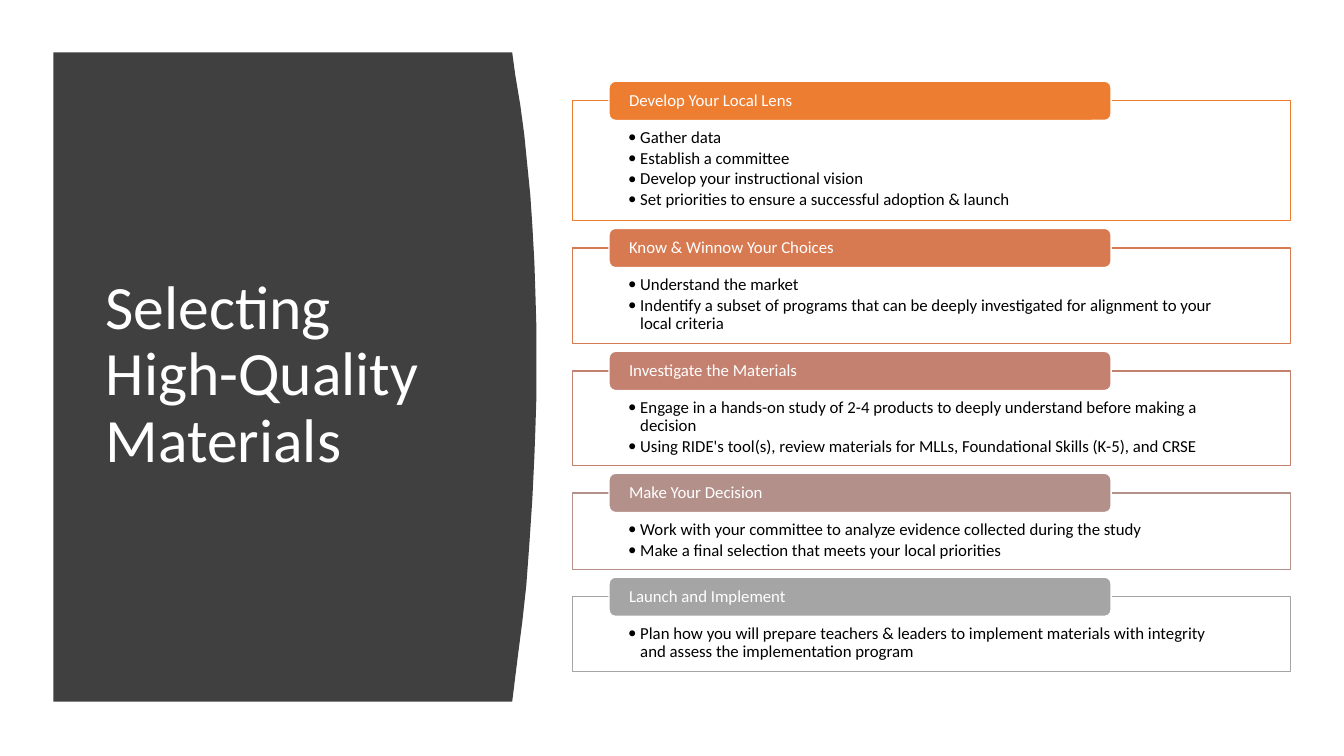
import pptx
import pptx.util
import pptx.dml.color
import pptx.enum.shapes
import pptx.enum.text
import pptx.oxml
import pptx.oxml.ns
from pptx.util import Inches

Shape = pptx.enum.shapes.MSO_SHAPE
Anchor = pptx.enum.text.MSO_ANCHOR
Align = pptx.enum.text.PP_ALIGN
qn = pptx.oxml.ns.qn


def color(code):
    return pptx.dml.color.RGBColor.from_string(code)


def style(para, size, code):
    para.alignment = Align.LEFT
    para.line_spacing = 0.9
    para.font.size = pptx.util.Pt(size)
    para.font.name = "Calibri"
    para.font.color.rgb = color(code)


deck = pptx.Presentation()
deck.slide_width = Inches(13.33)
deck.slide_height = Inches(7.5)
slide = deck.slides.add_slide(deck.slide_layouts[6])
shapes = slide.shapes

# Dark panel with a curved right edge
edge = [(5.08, 0.52), (5.11, 0.74), (5.16, 1.04), (5.2, 1.34), (5.23, 1.64),
        (5.26, 1.94), (5.28, 2.24), (5.3, 2.6), (5.31, 2.9), (5.32, 3.25),
        (5.32, 3.94), (5.31, 4.26), (5.3, 4.53), (5.28, 4.95), (5.25, 5.4),
        (5.22, 5.81), (5.18, 6.17), (5.14, 6.48), (5.11, 6.72), (5.08, 6.96)]
pen = shapes.build_freeform(Inches(0.53), Inches(0.52))
pen.add_line_segments([(Inches(x), Inches(y)) for x, y in edge + [(0.53, 6.96)]])
panel = pen.convert_to_shape()
panel.shadow.inherit = False
panel.fill.solid()
panel.fill.fore_color.rgb = color("404040")
panel.line.fill.background()

# Title
title = shapes.add_textbox(Inches(0.95), Inches(1.11), Inches(3.74), Inches(5.24))
frame = title.text_frame
frame.word_wrap = True
frame.vertical_anchor = Anchor.MIDDLE
frame.text = "Selecting High-Quality Materials"
style(frame.paragraphs[0], 44, "FFFFFF")

# Steps: heading, colour, box height, bullets
steps = [
    ("Develop Your Local Lens", "ED7D31", 1.19,
     ["Gather data", "Establish a committee", "Develop your instructional vision",
      "Set priorities to ensure a successful adoption & launch"]),
    ("Know & Winnow Your Choices", "D87A51", 0.95,
     ["Understand the market",
      "Indentify a subset of programs that can be deeply investigated "
      "for alignment to your local criteria"]),
    ("Investigate the Materials", "C48170", 0.94,
     ["Engage in a hands-on study of 2-4 products to deeply understand "
      "before making a decision",
      "Using RIDE's tool(s), review materials for MLLs, "
      "Foundational Skills (K-5), and CRSE"]),
    ("Make Your Decision", "B4908B", 0.76,
     ["Work with your committee to analyze evidence collected during the study",
      "Make a final selection that meets your local priorities"]),
    ("Launch and Implement", "A5A5A5", 0.74,
     ["Plan how you will prepare teachers & leaders to implement materials "
      "with integrity and assess the implementation program"]),
]
gap = 0.27
top = 1.0
thick = 0.39

for head, tint, high, items in steps:
    box = shapes.add_shape(Shape.RECTANGLE, Inches(5.68), Inches(top),
                           Inches(7.12), Inches(high))
    tab = shapes.add_shape(Shape.ROUNDED_RECTANGLE, Inches(6.04),
                           Inches(top - thick / 2), Inches(4.98), Inches(thick))
    for part, fill, line, side, above, below, anchor in (
            (box, "FFFFFF", tint, 0.55, 0.28, 0.05, Anchor.TOP),
            (tab, tint, "FFFFFF", 0.18, 0, 0, Anchor.MIDDLE)):
        part.shadow.inherit = False
        part.fill.solid()
        part.fill.fore_color.rgb = color(fill)
        part.line.color.rgb = color(line)
        part.line.width = pptx.util.Pt(1)
        frame = part.text_frame
        frame.word_wrap = True
        frame.vertical_anchor = anchor
        frame.margin_left = frame.margin_right = Inches(side)
        frame.margin_top = Inches(above)
        frame.margin_bottom = Inches(below)

    # Box fill is 90% opaque
    tone = box.fill._xPr.find(".//" + qn("a:srgbClr"))
    tone.append(tone.makeelement(qn("a:alpha"), {"val": "90000"}))

    # Heading and bullets
    tab.text_frame.text = head
    style(tab.text_frame.paragraphs[0], 12, "FFFFFF")
    box.text_frame.text = "\n".join(items)
    for para in box.text_frame.paragraphs:
        props = para._p.get_or_add_pPr()
        props.set("marL", str(Inches(0.12)))
        props.set("indent", str(Inches(-0.12)))
        for tag, key, val in (("a:buFont", "typeface", "Calibri"),
                              ("a:buChar", "char", "•")):
            props.append(props.makeelement(qn(tag), {key: val}))
        style(para, 12, "000000")
        para.space_after = pptx.util.Pt(1.8)
    top += high + gap

deck.save("out.pptx")
